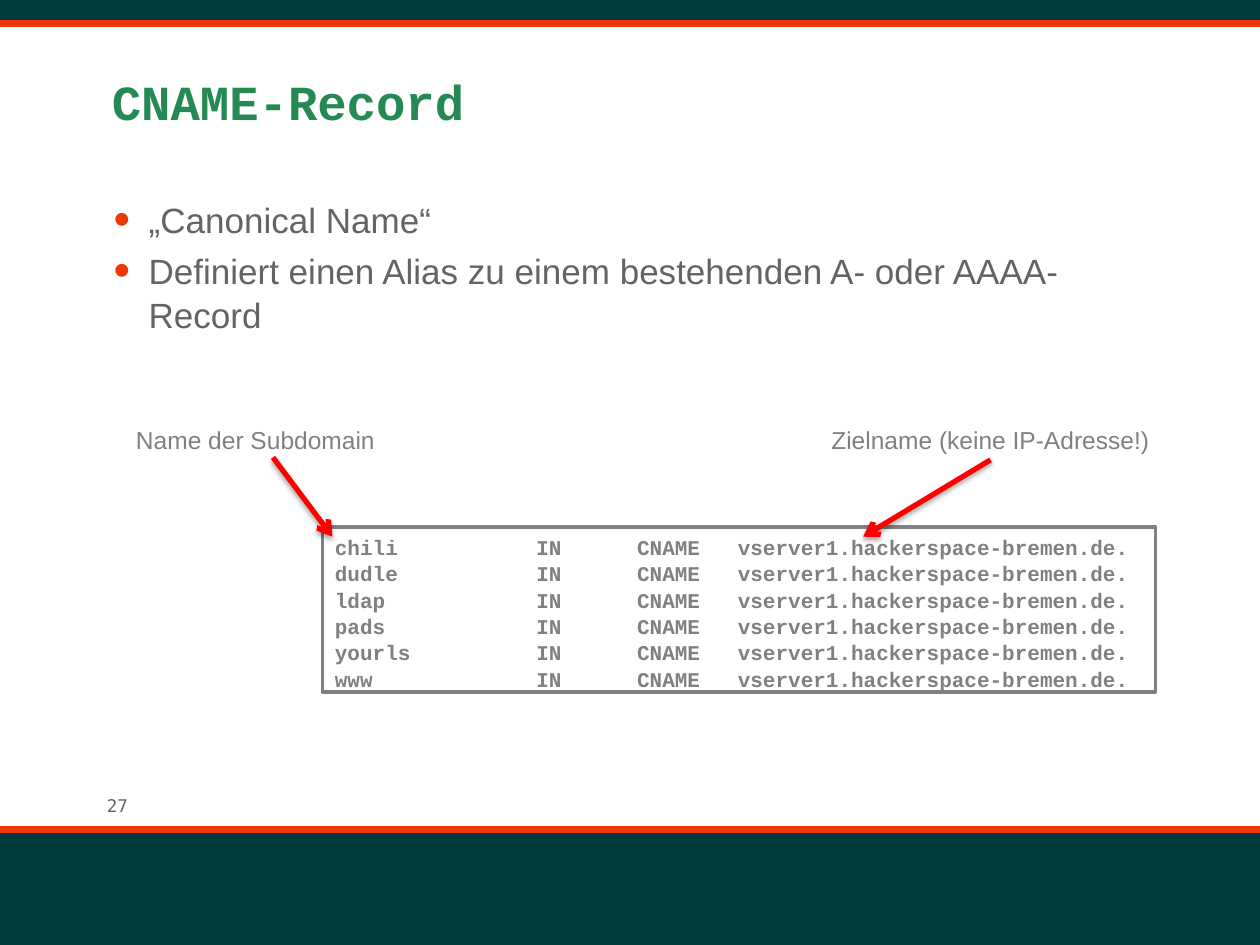
from dataclasses import dataclass
from typing import NamedTuple

import pptx
import pptx.dml.color
import pptx.enum.shapes
import pptx.oxml
import pptx.oxml.ns
import pptx.util
from lxml import etree

Pt = pptx.util.Pt


class TextStyle(NamedTuple):
    font: str
    size: float
    color: str
    bold: bool = False


@dataclass(frozen=True)
class Theme:
    dark: str = "003A3D"
    accent: str = "EE3709"
    arrow: str = "FF0000"
    frame: str = "808080"
    paper: str = "FFFFFF"
    line_spacing: float = 1.05
    title: TextStyle = TextStyle("Courier New", 28, "258954", True)
    body: TextStyle = TextStyle("Arial", 20, "646464")
    code: TextStyle = TextStyle("Courier New", 12, "808080", True)
    label: TextStyle = TextStyle("Arial", 14, "808080")
    page_number: TextStyle = TextStyle("DejaVu Sans Mono", 10, "646464")


class Box(NamedTuple):
    left: float
    top: float
    width: float
    height: float


class Line(NamedTuple):
    start: tuple[float, float]
    end: tuple[float, float]


class Callout(NamedTuple):
    text: str
    box: Box
    arrow: Line


THEME = Theme()
WIDTH, HEIGHT = 720, 540

BARS = [Box(0, 474, WIDTH, 66), Box(0, 0, WIDTH, 12)]
STRIPE_TOPS = [474, 13.7]
BULLETS = [
    "„Canonical Name“",
    "Definiert einen Alias zu einem bestehenden A- oder AAAA-Record",
]
SUBDOMAINS = ["chili", "dudle", "ldap", "pads", "yourls", "www"]
TARGET = "vserver1.hackerspace-bremen.de."
CALLOUTS = [
    Callout("Name der Subdomain", Box(70.6, 238.3, 151.9, 24.5),
            Line((156, 261.4), (190, 306.7))),
    Callout("Zielname (keine IP-Adresse!)", Box(468, 238.3, 197.3, 24.5),
            Line((566, 262.8), (493.2, 306.7))),
]


def rgb(color: str) -> pptx.dml.color.RGBColor:
    return pptx.dml.color.RGBColor.from_string(color)


def add_xml(parent, xml: str) -> None:
    """Append a DrawingML fragment to its parent element."""
    name, rest = xml[1:].split(maxsplit=1) if " " in xml else (xml[1:-2], "/>")
    namespace = pptx.oxml.ns.nsdecls("a")
    parent.append(pptx.oxml.parse_xml(f"<{name} {namespace} {rest}"))


def write(shape, lines: list[str], style: TextStyle, wrap: bool = True) -> None:
    frame = shape.text_frame
    frame.word_wrap = wrap
    frame.vertical_anchor = pptx.enum.text.MSO_ANCHOR.TOP
    for index, line in enumerate(lines):
        paragraph = frame.paragraphs[0] if index == 0 else frame.add_paragraph()
        paragraph.alignment = pptx.enum.text.PP_ALIGN.LEFT
        paragraph.line_spacing = THEME.line_spacing
        run = paragraph.add_run()
        run.text = line
        run.font.name = style.font
        run.font.size = Pt(style.size)
        run.font.bold = style.bold
        run.font.color.rgb = rgb(style.color)


def add_text(slide, box: Box, lines: list[str], style: TextStyle, wrap: bool = True):
    shape = slide.shapes.add_textbox(*map(Pt, box))
    write(shape, lines, style, wrap)
    return shape


def add_rectangle(slide, box: Box, fill: str, line: str, line_width: float):
    shape = slide.shapes.add_shape(
        pptx.enum.shapes.MSO_SHAPE.RECTANGLE, *map(Pt, box))
    shape.shadow.inherit = False
    shape.fill.solid()
    shape.fill.fore_color.rgb = rgb(fill)
    shape.line.color.rgb = rgb(line)
    shape.line.width = Pt(line_width)
    return shape


def add_line(slide, line: Line, color: str, width: float, arrow: bool = False) -> None:
    connector = slide.shapes.add_connector(
        pptx.enum.shapes.MSO_CONNECTOR.STRAIGHT, *map(Pt, line.start + line.end))
    connector.line.color.rgb = rgb(color)
    connector.line.width = Pt(width)
    properties = connector._element.spPr
    effects = etree.SubElement(properties, pptx.oxml.ns.qn("a:effectLst"))
    if arrow:
        add_xml(connector.line._get_or_add_ln(), '<a:tailEnd type="arrow"/>')
        add_xml(effects, f'<a:outerShdw blurRad="{Pt(3.1)}" dist="{Pt(1.8)}" '
                         'dir="5400000" rotWithShape="0"><a:srgbClr val="000000">'
                         '<a:alpha val="35000"/></a:srgbClr></a:outerShdw>')


def add_bullets(paragraphs) -> None:
    for index, paragraph in enumerate(paragraphs):
        if index:
            paragraph.space_before = Pt(4)
        properties = paragraph._p.get_or_add_pPr()
        properties.set("marL", str(Pt(21)))
        properties.set("indent", str(Pt(-20)))
        add_xml(properties, f'<a:buClr ><a:srgbClr val="{THEME.accent}"/></a:buClr>')
        add_xml(properties, '<a:buSzPct val="135000"/>')
        add_xml(properties, '<a:buFont typeface="Arial"/>')
        add_xml(properties, '<a:buChar char="•"/>')


def main() -> None:
    presentation = pptx.Presentation()
    presentation.slide_width, presentation.slide_height = Pt(WIDTH), Pt(HEIGHT)
    slide = presentation.slides.add_slide(presentation.slide_layouts[6])

    # Page number, bars and stripes
    add_text(slide, Box(54, 450, 210, 19.4), ["27"], THEME.page_number)
    for bar, top in zip(BARS, STRIPE_TOPS):
        add_rectangle(slide, bar, THEME.dark, THEME.dark, 0.75)
        add_line(slide, Line((0, top), (WIDTH, top)), THEME.accent, 4)

    # Title and bullet list
    title = add_text(slide, Box(56.9, 31, 612, 71.3), ["CNAME-Record"], THEME.title)
    title.text_frame.margin_top = Pt(8)
    body = add_text(slide, Box(56.9, 108.7, 612, 341.3), BULLETS, THEME.body)
    add_bullets(body.text_frame.paragraphs)

    # Zone file records
    records = add_rectangle(
        slide, Box(184.3, 301, 476, 94.3), THEME.paper, THEME.frame, 2)
    write(records, [f"{name:<16}{'IN':<8}{'CNAME':<8}{TARGET}" for name in SUBDOMAINS],
          THEME.code)

    # Labels with arrows
    for callout in CALLOUTS:
        add_text(slide, callout.box, [callout.text], THEME.label, wrap=False)
        add_line(slide, callout.arrow, THEME.arrow, 3, arrow=True)

    presentation.save("out.pptx")


if __name__ == "__main__":
    main()
